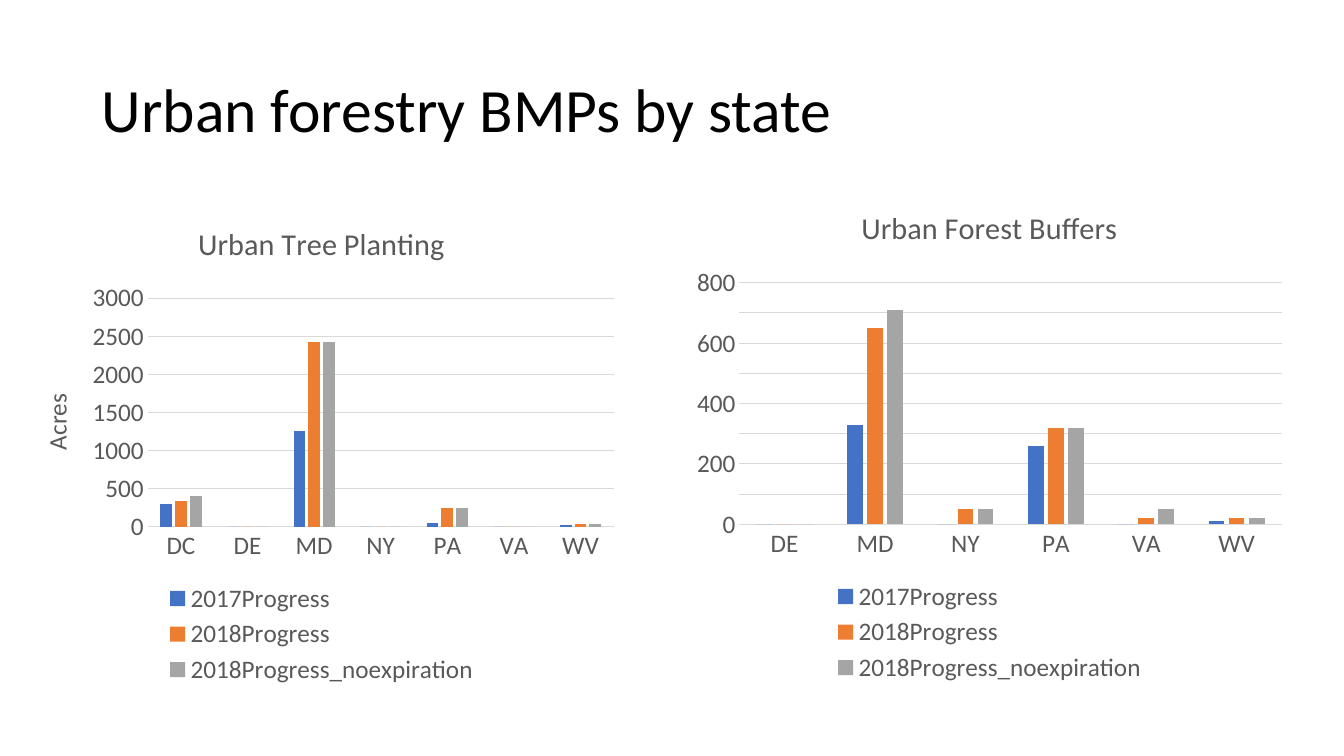
from pptx import Presentation
from pptx.chart.data import CategoryChartData
from pptx.dml.color import RGBColor
from pptx.enum.chart import XL_CHART_TYPE, XL_LEGEND_POSITION, XL_TICK_MARK
from pptx.enum.text import MSO_ANCHOR
from pptx.util import Pt

PAGE = (1344, 756)
HEAD = {"text": "Urban forestry BMPs by state", "box": (92, 40, 1159, 146)}
NAMES = ["2017Progress", "2018Progress", "2018Progress_noexpiration"]
CHARTS = [
    {
        "title": "Urban Tree Planting",
        "unit": "Acres",
        "box": (17, 202, 609, 488),
        "top": 3000,
        "step": 500,
        "states": ["DC", "DE", "MD", "NY", "PA", "VA", "WV"],
        "rows": [
            (300, 0, 1260, 0, 50, 0, 20),
            (340, 0, 2420, 0, 250, 0, 40),
            (400, 0, 2420, 0, 250, 0, 40),
        ],
    },
    {
        "title": "Urban Forest Buffers",
        "unit": None,
        "box": (685, 186, 609, 502),
        "top": 800,
        "step": 100,
        "states": ["DE", "MD", "NY", "PA", "VA", "WV"],
        "rows": [
            (0, 330, 0, 260, 0, 10),
            (0, 650, 50, 320, 20, 20),
            (0, 710, 50, 320, 50, 20),
        ],
    },
]
THEME = {
    "font": "Calibri",
    "head": (44, "000000"),
    "title": (21.6, "595959"),
    "label": (18, "595959"),
    "grid": "D9D9D9",
    "bars": ["4472C4", "ED7D31", "A5A5A5"],
}
SCALE = 914400 / 100.8
AXIS = {"major_tick_mark": XL_TICK_MARK.NONE, "minor_tick_mark": XL_TICK_MARK.NONE}
PLOT = {"gap_width": 219, "overlap": -27, "vary_by_categories": False}
LEGEND = {"position": XL_LEGEND_POSITION.BOTTOM, "include_in_layout": False}


def emu(box):
    return [round(n * SCALE) for n in box]


def apply(item, values):
    for name, value in values.items():
        setattr(item, name, value)


def style(font, kind):
    size, color = THEME[kind]
    apply(font, {"name": THEME["font"], "size": Pt(size), "bold": False})
    font.color.rgb = RGBColor.from_string(color)


def rule(line):
    line.width = Pt(0.75)
    line.color.rgb = RGBColor.from_string(THEME["grid"])


def write(frame, text, kind):
    frame.text = text
    style(frame.paragraphs[0].runs[0].font, kind)


def add_head(slide):
    frame = slide.shapes.add_textbox(*emu(HEAD["box"])).text_frame
    apply(frame, {"word_wrap": True, "vertical_anchor": MSO_ANCHOR.MIDDLE})
    write(frame, HEAD["text"], "head")
    frame.paragraphs[0].line_spacing = 0.9


def add_bars(slide, part):
    data = CategoryChartData()
    data.categories = part["states"]
    for name, row in zip(NAMES, part["rows"]):
        data.add_series(name, row)
    chart = slide.shapes.add_chart(
        XL_CHART_TYPE.COLUMN_CLUSTERED, *emu(part["box"]), data
    ).chart
    style(chart.font, "label")
    chart.has_title = True
    write(chart.chart_title.text_frame, part["title"], "title")
    chart.chart_title.include_in_layout = False

    chart.has_legend = True
    apply(chart.legend, LEGEND)
    style(chart.legend.font, "label")

    plot = chart.plots[0]
    apply(plot, PLOT)
    for bar, color in zip(plot.series, THEME["bars"]):
        bar.format.fill.solid()
        bar.format.fill.fore_color.rgb = RGBColor.from_string(color)
        bar.invert_if_negative = False

    base, side = chart.category_axis, chart.value_axis
    for axis in (base, side):
        apply(axis, AXIS)
        style(axis.tick_labels.font, "label")
    rule(base.format.line)
    side.format.line.fill.background()
    scale = {"minimum_scale": 0, "maximum_scale": part["top"], "major_unit": part["step"]}
    apply(side, scale)
    rule(side.major_gridlines.format.line)
    if part["unit"]:
        write(side.axis_title.text_frame, part["unit"], "label")


def main():
    deck = Presentation()
    deck.slide_width, deck.slide_height = emu(PAGE)
    slide = deck.slides.add_slide(deck.slide_layouts[6])
    add_head(slide)
    for part in CHARTS:
        add_bars(slide, part)
    deck.save("out.pptx")


if __name__ == "__main__":
    main()
